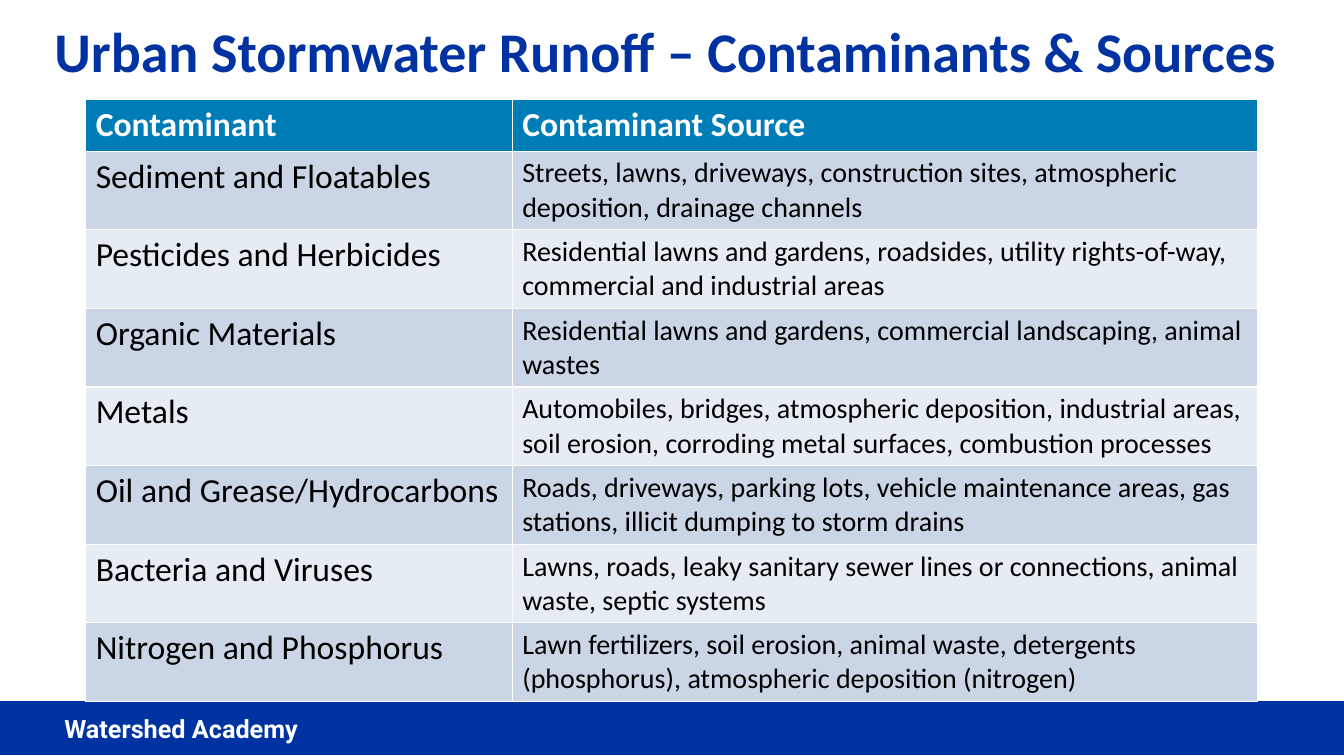
from pptx import Presentation
from pptx.dml.color import RGBColor
from pptx.enum.shapes import MSO_SHAPE
from pptx.enum.text import MSO_ANCHOR, PP_ALIGN
from pptx.util import Inches, Pt

COLORS = {
    "title": "0032A1",
    "bar": "0033A1",
    "header": "007CB7",
    "odd_row": "CAD6E5",
    "even_row": "E6ECF3",
    "white": "FFFFFF",
    "black": "000000",
}
SLIDE_WIDTH, SLIDE_HEIGHT = 13.33, 7.5
TITLE_BOX = (0.44, 0, 12.45, 0.99)
TABLE_BOX = (0.85, 0.99, 11.62, 5.97)
FOOTER_BOX = (0, 6.96, SLIDE_WIDTH, 0.53)
FIRST_COLUMN_WIDTH = 4.23
HEADER_HEIGHT = 0.51

HEADINGS = ("Contaminant", "Contaminant Source")
CONTAMINANTS = [
    ("Sediment and Floatables",
     "Streets, lawns, driveways, construction sites, atmospheric deposition, drainage channels"),
    ("Pesticides and Herbicides",
     "Residential lawns and gardens, roadsides, utility rights-of-way, commercial and industrial areas"),
    ("Organic Materials",
     "Residential lawns and gardens, commercial landscaping, animal wastes"),
    ("Metals",
     "Automobiles, bridges, atmospheric deposition, industrial areas, soil erosion, "
     "corroding metal surfaces, combustion processes"),
    ("Oil and Grease/Hydrocarbons",
     "Roads, driveways, parking lots, vehicle maintenance areas, gas stations, "
     "illicit dumping to storm drains"),
    ("Bacteria and Viruses",
     "Lawns, roads, leaky sanitary sewer lines or connections, animal waste, septic systems"),
    ("Nitrogen and Phosphorus",
     "Lawn fertilizers, soil erosion, animal waste, detergents (phosphorus), "
     "atmospheric deposition (nitrogen)"),
]


def color(name):
    """Return the named colour."""
    return RGBColor.from_string(COLORS[name])


def write(text_frame, text, size, color_name, bold=False, font="Calibri"):
    """Write one left-aligned run into the first paragraph."""
    paragraph = text_frame.paragraphs[0]
    paragraph.alignment = PP_ALIGN.LEFT
    run = paragraph.add_run()
    run.text = text
    run.font.name = font
    run.font.size = Pt(size)
    run.font.bold = bold
    run.font.color.rgb = color(color_name)


def add_footer(slide, box, text):
    """Draw the footer bar with its label."""
    left, top, width, height = box
    bar = slide.shapes.add_shape(MSO_SHAPE.RECTANGLE, *map(Inches, box))
    bar.shadow.inherit = False
    bar.fill.solid()
    bar.fill.fore_color.rgb = color("bar")
    bar.line.color.rgb = color("title")
    bar.line.width = Pt(0.75)
    label = slide.shapes.add_textbox(
        Inches(left + 0.54), Inches(top + 0.07), Inches(width * 0.336), Inches(0.41))
    label.text_frame.word_wrap = True
    write(label.text_frame, text, 18, "white", bold=True, font="Roboto")


def add_title(slide, box, text):
    """Place and format the title placeholder."""
    title = slide.shapes.title
    title.left, title.top, title.width, title.height = map(Inches, box)
    title.text_frame.vertical_anchor = MSO_ANCHOR.MIDDLE
    title.text_frame.word_wrap = True
    write(title.text_frame, text, 40, "title", bold=True)


def add_contaminant_table(slide, box):
    """Build the table of contaminants and their sources."""
    width, height = box[2:]
    rows = [HEADINGS, *CONTAMINANTS]
    table = slide.shapes.add_table(len(rows), len(HEADINGS), *map(Inches, box)).table
    table.columns[0].width = Inches(FIRST_COLUMN_WIDTH)
    table.columns[1].width = Inches(width - FIRST_COLUMN_WIDTH)
    body_height = (height - HEADER_HEIGHT) / len(CONTAMINANTS)
    for row_index, texts in enumerate(rows):
        is_header = row_index == 0
        table.rows[row_index].height = Inches(HEADER_HEIGHT if is_header else body_height)
        fill_name = "header" if is_header else "odd_row" if row_index % 2 else "even_row"
        for column_index, text in enumerate(texts):
            cell = table.cell(row_index, column_index)
            cell.fill.solid()
            cell.fill.fore_color.rgb = color(fill_name)
            size = 24 if is_header or column_index == 0 else 20
            write(cell.text_frame, text, size, "white" if is_header else "black", is_header)


def main():
    """Build and save the presentation."""
    presentation = Presentation()
    presentation.slide_width = Inches(SLIDE_WIDTH)
    presentation.slide_height = Inches(SLIDE_HEIGHT)
    slide = presentation.slides.add_slide(presentation.slide_layouts[5])
    add_footer(slide, FOOTER_BOX, "Watershed Academy")
    add_title(slide, TITLE_BOX, "Urban Stormwater Runoff – Contaminants & Sources")
    add_contaminant_table(slide, TABLE_BOX)
    presentation.save("out.pptx")


if __name__ == "__main__":
    main()
